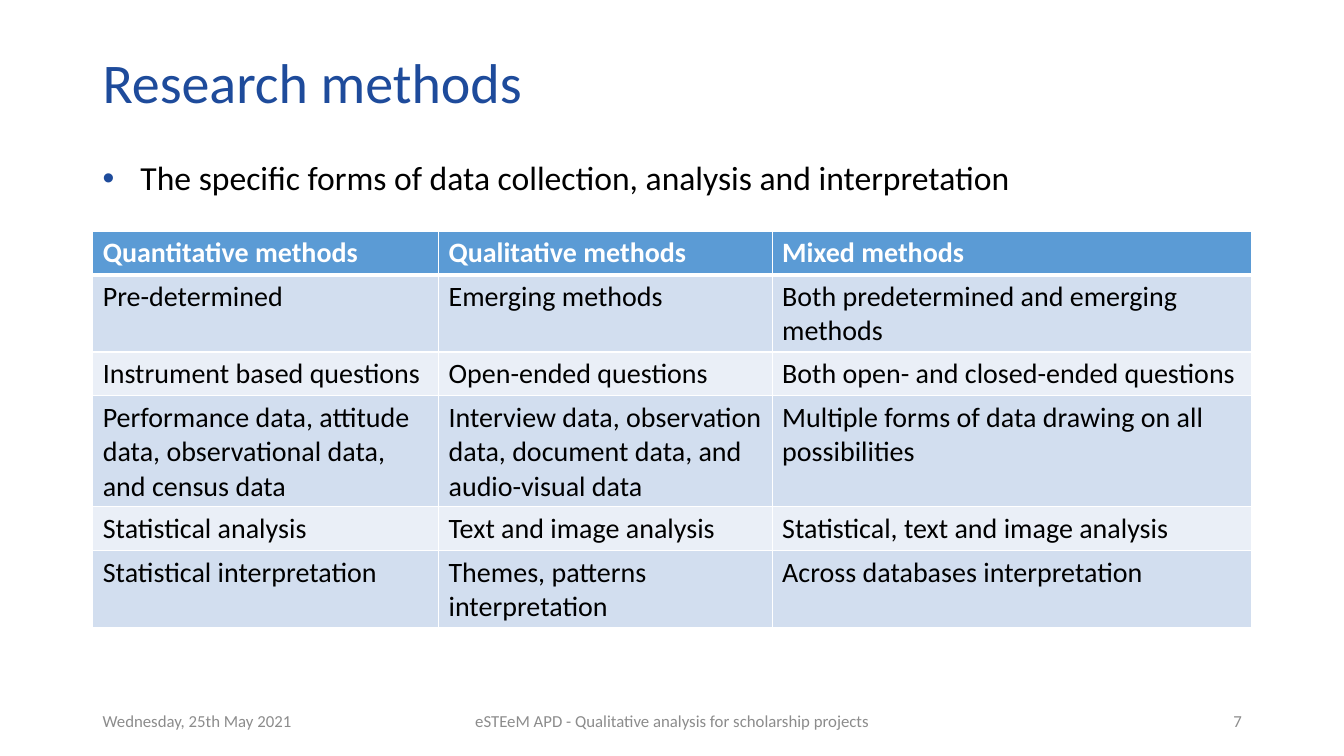
from dataclasses import dataclass

from lxml import etree
from pptx import Presentation
from pptx.dml.color import RGBColor
from pptx.enum.text import MSO_ANCHOR, PP_ALIGN
from pptx.oxml.ns import qn
from pptx.util import Pt

LEFT, MID, RIGHT = PP_ALIGN.LEFT, PP_ALIGN.CENTER, PP_ALIGN.RIGHT
TOP, CENTRE = MSO_ANCHOR.TOP, MSO_ANCHOR.MIDDLE


@dataclass(frozen=True)
class Theme:
    font: str = "Calibri"
    blue: str = "1E4B9B"
    black: str = "000000"
    white: str = "FFFFFF"
    grey: str = "8C8C8C"
    head: str = "5B9BD5"
    bands: tuple = ("D2DEEF", "EAEFF7")
    title: int = 40
    body: int = 24
    cell: int = 20
    foot: int = 12


THEME = Theme()
EDGE, WIDTH = 66.24, 828
COLS = (247, 238.3, 342.7)
ROWS = (
    ("Quantitative methods", "Qualitative methods", "Mixed methods"),
    ("Pre-determined", "Emerging methods", "Both predetermined and emerging methods"),
    ("Instrument based questions", "Open-ended questions",
     "Both open- and closed-ended questions"),
    ("Performance data, attitude data, observational data, and census data",
     "Interview data, observation data, document data, and audio-visual data",
     "Multiple forms of data drawing on all possibilities"),
    ("Statistical analysis", "Text and image analysis",
     "Statistical, text and image analysis"),
    ("Statistical interpretation", "Themes, patterns interpretation",
     "Across databases interpretation"),
)
FEET = (
    (EDGE, 216, "Wednesday, 25th May 2021", LEFT),
    (318.24, 324, "eSTEeM APD - Qualitative analysis for scholarship projects", MID),
    (678.24, 216, "7", RIGHT),
)


def add_run(para, text, size, color, bold=False):
    run = para.add_run()
    run.text = text
    font = run.font
    font.name, font.size, font.bold = THEME.font, Pt(size), bold
    font.color.rgb = RGBColor.from_string(color)


def add_text(slide, area, text, size, color, anchor=CENTRE, align=LEFT, space=1.0):
    box = slide.shapes.add_textbox(*map(Pt, area))
    frame = box.text_frame
    frame.word_wrap = True
    frame.vertical_anchor = anchor
    para = frame.paragraphs[0]
    para.alignment = align
    para.line_spacing = space
    add_run(para, text, size, color)
    return para


def add_bullet(para, color):
    props = para._p.get_or_add_pPr()
    props.set("marL", str(Pt(27)))
    props.set("indent", str(-Pt(27)))
    tint = etree.SubElement(props, qn("a:buClr"))
    etree.SubElement(tint, qn("a:srgbClr"), val=color)
    etree.SubElement(props, qn("a:buFont"), typeface="Arial")
    etree.SubElement(props, qn("a:buChar"), char="•")


def set_edges(cell, sides):
    props = cell._tc.get_or_add_tcPr()
    for spot, (side, width) in enumerate(sides.items()):
        line = etree.Element(qn(f"a:ln{side}"), w=str(Pt(width)))
        fill = etree.SubElement(line, qn("a:solidFill"))
        etree.SubElement(fill, qn("a:srgbClr"), val=THEME.white)
        props.insert(spot, line)


def fill_cell(cell, text, row):
    head = row == 0
    cell.fill.solid()
    color = THEME.head if head else THEME.bands[(row - 1) % 2]
    cell.fill.fore_color.rgb = RGBColor.from_string(color)
    add_run(cell.text_frame.paragraphs[0], text, THEME.cell,
            THEME.white if head else THEME.black, head)
    set_edges(cell, {"L": 1, "R": 1, "T": 3 if row == 1 else 1, "B": 3 if head else 1})


def add_grid(slide, left, top):
    high = 29.5
    area = (left, top, sum(COLS), high * len(ROWS))
    table = slide.shapes.add_table(len(ROWS), len(COLS), *map(Pt, area)).table
    for col, width in zip(table.columns, COLS):
        col.width = Pt(width)
    for row, texts in enumerate(ROWS):
        table.rows[row].height = Pt(high)
        for col, text in enumerate(texts):
            fill_cell(table.cell(row, col), text, row)


def main():
    deck = Presentation()
    deck.slide_width, deck.slide_height = Pt(960), Pt(540)
    slide = deck.slides.add_slide(deck.slide_layouts[6])
    add_text(slide, (EDGE, 28.8, WIDTH, 64.8), "Research methods",
             THEME.title, THEME.blue, space=0.9)
    point = add_text(slide, (EDGE, 106.56, WIDTH, 381.6),
                     "The specific forms of data collection, analysis and interpretation",
                     THEME.body, THEME.black, TOP, space=1.08)
    add_bullet(point, THEME.blue)
    for left, width, text, align in FEET:
        add_text(slide, (left, 500.4, width, 28.8), text,
                 THEME.foot, THEME.grey, align=align)
    add_grid(slide, EDGE, 165)
    deck.save("out.pptx")


if __name__ == "__main__":
    main()
